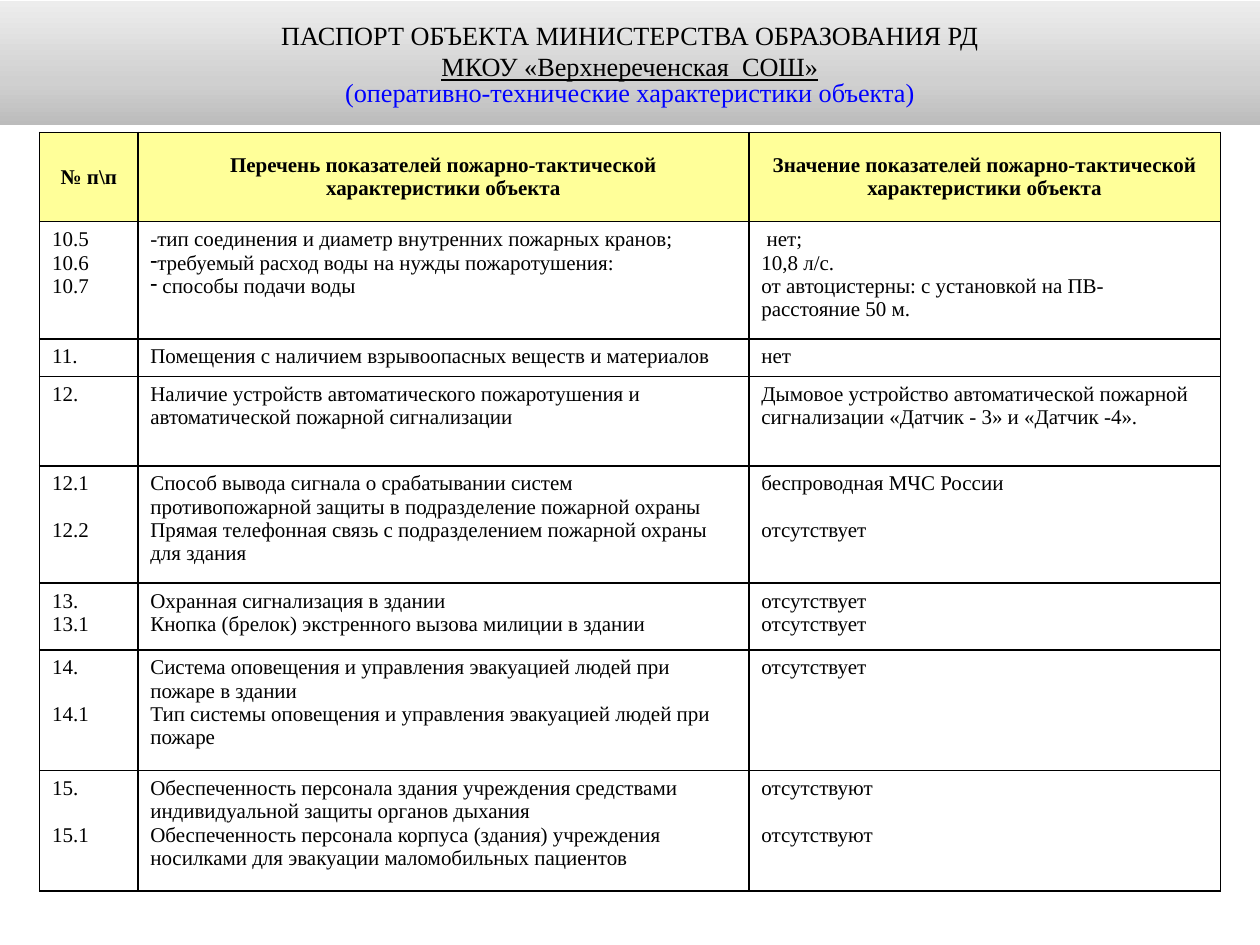
from dataclasses import dataclass

from lxml import etree
from pptx import Presentation
from pptx.dml.color import RGBColor
from pptx.enum.text import MSO_ANCHOR, MSO_AUTO_SIZE, PP_ALIGN
from pptx.oxml.ns import qn
from pptx.util import Cm, Pt

CENTER, LEFT = PP_ALIGN.CENTER, PP_ALIGN.LEFT
MIDDLE, TOP = MSO_ANCHOR.MIDDLE, MSO_ANCHOR.TOP
NO_FIT = MSO_AUTO_SIZE.NONE
TITLE_ONLY = 5


@dataclass(frozen=True)
class Theme:
    font: str = "Times New Roman"
    title_size: float = 15
    body_size: float = 12
    gap: float = 13.4  # one skipped line of body text
    border: float = 1
    ink: str = "000000"
    accent: str = "0000FF"
    header: str = "FFFF99"
    paper: str = "FFFFFF"
    band: tuple = ((0, "BCBCBC"), (35, "D0D0D0"), (100, "EDEDED"))


# A paragraph starting with GAP stands one line lower; one with DASH gets a dash bullet
GAP, DASH = "^", "•"

TITLE = ["ПАСПОРТ ОБЪЕКТА МИНИСТЕРСТВА ОБРАЗОВАНИЯ РД",
         "МКОУ «Верхнереченская  СОШ»",
         "(оперативно-технические характеристики объекта)"]

COLUMNS = [1.98, 12.32, 9.5]

# Row height in cm, then the paragraphs of each cell
ROWS = [
    (1.8, ["№ п\\п"],
     ["Перечень показателей пожарно-тактической характеристики объекта"],
     ["Значение показателей пожарно-тактической характеристики объекта"]),
    (2.36, ["10.5", "10.6", "10.7"],
     ["-тип соединения и диаметр внутренних пожарных кранов;",
      DASH + "требуемый расход воды на нужды пожаротушения:",
      DASH + " способы подачи воды"],
     [" нет;", "10,8 л/с.",
      "от автоцистерны: с установкой на ПВ- расстояние 50 м."]),
    (0.76, ["11."],
     ["Помещения с наличием взрывоопасных веществ и материалов"],
     ["нет"]),
    (1.8, ["12."],
     ["Наличие устройств автоматического пожаротушения и "
      "автоматической пожарной сигнализации"],
     ["Дымовое устройство автоматической пожарной сигнализации "
      "«Датчик - 3» и «Датчик -4»."]),
    (2.36, ["12.1", GAP + "12.2"],
     ["Способ вывода сигнала о срабатывании систем противопожарной "
      "защиты в подразделение пожарной охраны",
      "Прямая телефонная связь с подразделением пожарной охраны для здания"],
     ["беспроводная МЧС России", GAP + "отсутствует"]),
    (1.35, ["13.", "13.1"],
     ["Охранная сигнализация в здании",
      "Кнопка (брелок) экстренного вызова милиции в здании"],
     ["отсутствует", "отсутствует"]),
    (2.43, ["14.", GAP + "14.1"],
     ["Система оповещения и управления эвакуацией людей при пожаре в здании",
      "Тип системы оповещения и управления эвакуацией людей при пожаре"],
     ["отсутствует"]),
    (2.43, ["15.", GAP + "15.1"],
     ["Обеспеченность персонала здания учреждения средствами "
      "индивидуальной защиты органов дыхания",
      "Обеспеченность персонала корпуса (здания) учреждения "
      "носилками для эвакуации маломобильных пациентов"],
     ["отсутствуют", GAP + "отсутствуют"]),
]


class SlideBuilder:
    def __init__(self, slide, theme):
        self.s = slide
        self.theme = theme

    def style(self, p, size, align=LEFT, bold=False, color=None):
        p.alignment = align
        for r in p.runs:
            r.font.name = self.theme.font
            r.font.size = Pt(size)
            r.font.bold = bold
            r.font.color.rgb = RGBColor.from_string(color or self.theme.ink)

    def title(self, lines, left, top, width, height):
        sp = self.s.shapes.title
        sp.left, sp.top, sp.width, sp.height = map(Cm, (left, top, width, height))
        self.gradient(sp.fill)
        tf = sp.text_frame
        tf.text = "\n".join(lines)
        tf.word_wrap, tf.auto_size = True, NO_FIT
        tf.vertical_anchor = MIDDLE
        for p in tf.paragraphs:
            self.style(p, self.theme.title_size, CENTER)
            p.line_spacing = 1.0
        _, school, subtitle = tf.paragraphs
        school.runs[0].font.underline = True
        self.style(subtitle, self.theme.title_size, CENTER, color=self.theme.accent)
        subtitle.line_spacing = 0.8

    def gradient(self, fill):
        fill.gradient()
        fill.gradient_angle = 90
        # python-pptx cannot add stops, so the list is rewritten
        stops = fill.gradient_stops[0]._gs.getparent()
        for gs in list(stops):
            stops.remove(gs)
        for position, color in self.theme.band:
            gs = etree.SubElement(stops, qn("a:gs"), pos=str(position * 1000))
            etree.SubElement(gs, qn("a:srgbClr"), val=color)

    def table(self, rows, columns, left, top):
        heights = [row[0] for row in rows]
        frame = self.s.shapes.add_table(len(rows), len(columns), Cm(left), Cm(top),
                                        Cm(sum(columns)), Cm(sum(heights)))
        table = frame.table
        table.first_row = table.horz_banding = False
        for column, width in zip(table.columns, columns):
            column.width = Cm(width)
        for i, (height, *cells) in enumerate(rows):
            table.rows[i].height = Cm(height)
            for j, lines in enumerate(cells):
                self.cell(table.cell(i, j), lines, is_header=i == 0)

    def cell(self, cell, lines, is_header):
        self.borders(cell)
        cell.fill.solid()
        cell.fill.fore_color.rgb = RGBColor.from_string(
            self.theme.header if is_header else self.theme.paper)
        cell.vertical_anchor = MIDDLE if is_header else TOP
        cell.margin_left = cell.margin_right = Cm(0.25)
        cell.margin_top = cell.margin_bottom = Cm(0.13)
        tf = cell.text_frame
        tf.text = "\n".join(line.lstrip(GAP + DASH) for line in lines)
        for p, line in zip(tf.paragraphs, lines):
            self.style(p, self.theme.body_size, CENTER if is_header else LEFT, is_header)
            if line.startswith(GAP):
                p.space_before = Pt(self.theme.gap)
            if line.startswith(DASH):
                etree.SubElement(p._p.get_or_add_pPr(), qn("a:buChar"), char="-")

    def borders(self, cell):
        tc_pr = cell._tc.get_or_add_tcPr()
        for side in ("lnL", "lnR", "lnT", "lnB"):
            ln = etree.SubElement(tc_pr, qn(f"a:{side}"), w=str(Pt(self.theme.border)))
            solid = etree.SubElement(ln, qn("a:solidFill"))
            etree.SubElement(solid, qn("a:srgbClr"), val=self.theme.ink)


def main():
    prs = Presentation()
    prs.slide_width, prs.slide_height = Cm(25.4), Cm(19.05)
    slide = prs.slides.add_slide(prs.slide_layouts[TITLE_ONLY])
    builder = SlideBuilder(slide, Theme())

    # Heading band
    builder.title(TITLE, 0, 0.03, 25.4, 2.49)

    # Fire safety characteristics
    builder.table(ROWS, COLUMNS, 0.8, 2.67)

    prs.save("out.pptx")


if __name__ == "__main__":
    main()
